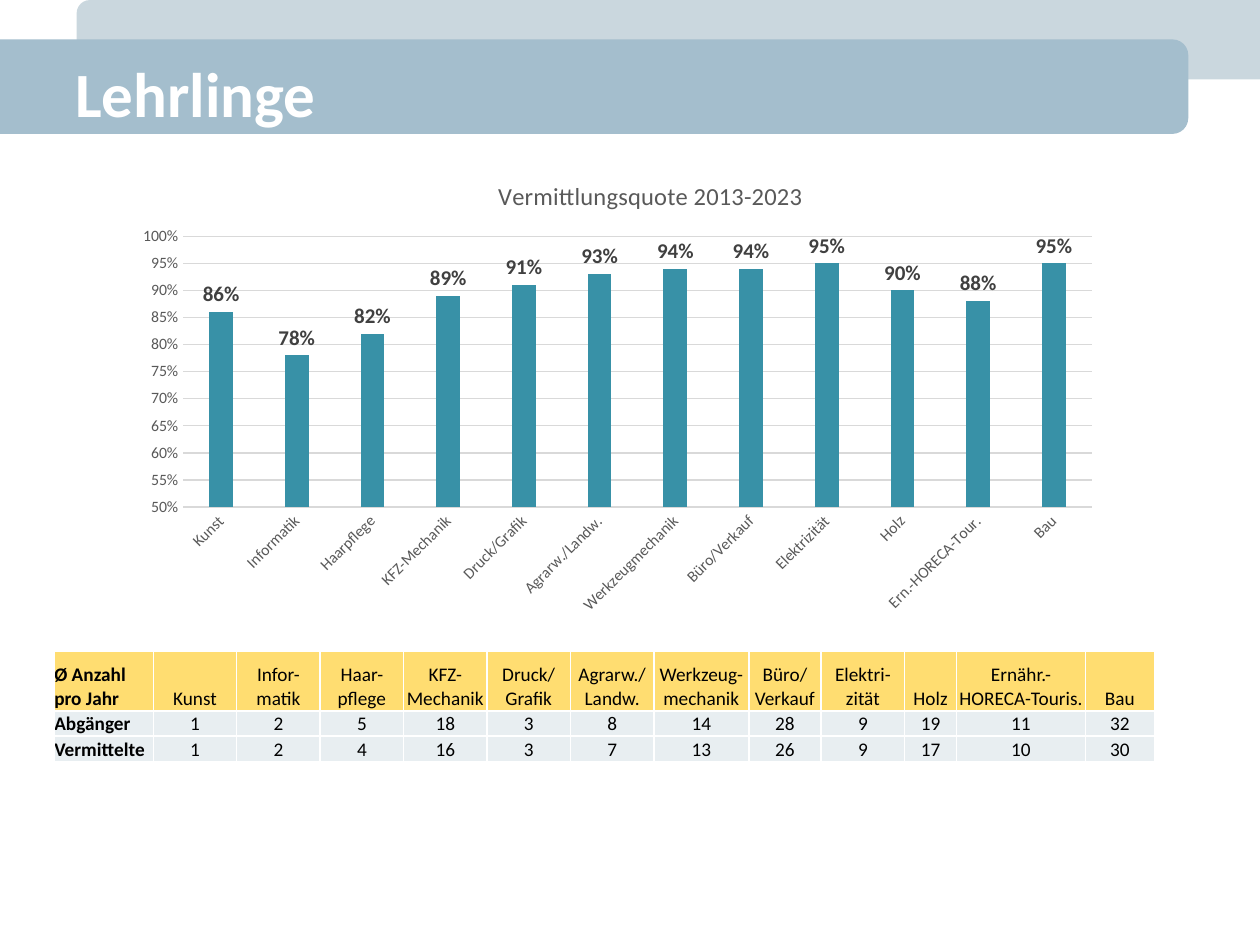
from dataclasses import dataclass

from lxml import etree
from pptx import Presentation
from pptx.chart.data import CategoryChartData
from pptx.dml.color import RGBColor
from pptx.enum import chart as charts, shapes, text
from pptx.oxml import ns, xmlchemy
from pptx.util import Pt


@dataclass(frozen=True)
class Theme:
    font: str = "Calibri"
    back_band: str = "8BA8B8"
    front_band: str = "A4BECD"
    white: str = "FFFFFF"
    black: str = "000000"
    muted: str = "595959"
    label: str = "404040"
    grid: str = "D9D9D9"
    bar: str = "3891A7"
    header: str = "FFDD71"
    body: str = "E8EEF1"
    title_size: float = 36
    chart_title_size: float = 14
    label_size: float = 12
    table_size: float = 11
    axis_size: float = 9


THEME = Theme()

QUOTAS = {
    "Kunst": 0.86, "Informatik": 0.78, "Haarpflege": 0.82, "KFZ-Mechanik": 0.89,
    "Druck/Grafik": 0.91, "Agrarw./Landw.": 0.93, "Werkzeugmechanik": 0.94,
    "Büro/Verkauf": 0.94, "Elektrizität": 0.95, "Holz": 0.90,
    "Ern.-HORECA-Tour.": 0.88, "Bau": 0.95,
}
TABLE_ROWS = [
    ["Ø Anzahl pro Jahr", "Kunst", "Infor-matik", "Haar-pflege", "KFZ-Mechanik",
     "Druck/ Grafik", "Agrarw./ Landw.", "Werkzeug-mechanik", "Büro/ Verkauf",
     "Elektri-zität", "Holz", "Ernähr.-HORECA-Touris.", "Bau"],
    ["Abgänger", 1, 2, 5, 18, 3, 8, 14, 28, 9, 19, 11, 32],
    ["Vermittelte", 1, 2, 4, 16, 3, 7, 13, 26, 9, 17, 10, 30],
]
COLUMN_WIDTHS = [56.6] + [47.7] * 6 + [54.2, 41.4, 47.7, 29.7, 73.7, 39.4]
ROW_HEIGHTS = [33.84, 14.4, 14.4]


def rgb(color):
    return RGBColor.from_string(color)


def set_font(font, size, color, bold=False):
    font.name, font.size, font.bold = THEME.font, Pt(size), bold
    font.color.rgb = rgb(color)


def write(frame, words, size, color, bold=False, align=text.PP_ALIGN.LEFT):
    frame.word_wrap = True
    para = frame.paragraphs[0]
    para.alignment = align
    span = para.add_run()
    span.text = words
    set_font(span.font, size, color, bold)


def add_band(page, left, top, width, height, rotation, color, opacity=100):
    """Draw a bar in the given box; its rounded end faces where rotation points."""
    # The preset rounds its top, so the unrotated shape has the sides swapped.
    shift = (width - height) / 2
    band = page.shapes.add_shape(
        shapes.MSO_SHAPE.ROUND_2_SAME_RECTANGLE,
        Pt(left + shift), Pt(top - shift), Pt(height), Pt(width))
    band.rotation = rotation
    band.shadow.inherit = False
    band.line.fill.background()
    band.fill.solid()
    band.fill.fore_color.rgb = rgb(color)
    if opacity < 100:
        tint = band.fill._xPr.find(".//" + ns.qn("a:srgbClr"))
        etree.SubElement(tint, ns.qn("a:alpha"), val=str(opacity * 1000))


def add_header(page, left, top, width, height):
    add_band(page, left + 43.8, top, width - 42.5, 45.3, 270, THEME.back_band, 45)
    add_band(page, left, top + 22.5, 679, 54, 90, THEME.front_band)
    box = page.shapes.add_textbox(Pt(left + 36), Pt(top + 21.6), Pt(648), Pt(height - 21.6))
    box.text_frame.vertical_anchor = text.MSO_ANCHOR.MIDDLE
    write(box.text_frame, "Lehrlinge", THEME.title_size, THEME.white, bold=True)


def add_borders(cell):
    props = cell._tc.get_or_add_tcPr()
    for place, side in enumerate(("lnL", "lnR", "lnT", "lnB")):
        line = etree.Element(ns.qn("a:" + side), w=str(Pt(1)))
        fill = etree.SubElement(line, ns.qn("a:solidFill"))
        etree.SubElement(fill, ns.qn("a:srgbClr"), val=THEME.white)
        props.insert(place, line)


def add_counts_table(page, left, top, width, height):
    table = page.shapes.add_table(
        len(TABLE_ROWS), len(COLUMN_WIDTHS), Pt(left), Pt(top), Pt(width), Pt(height)).table
    table.horz_banding = False
    for column, column_width in zip(table.columns, COLUMN_WIDTHS):
        column.width = Pt(column_width)
    for row, row_height in zip(table.rows, ROW_HEIGHTS):
        row.height = Pt(row_height)
    for r, values in enumerate(TABLE_ROWS):
        for c, value in enumerate(values):
            cell = table.cell(r, c)
            cell.margin_left = cell.margin_right = cell.margin_top = cell.margin_bottom = 0
            cell.vertical_anchor = text.MSO_ANCHOR.BOTTOM
            cell.fill.solid()
            cell.fill.fore_color.rgb = rgb(THEME.body if r else THEME.header)
            add_borders(cell)
            write(cell.text_frame, str(value), THEME.table_size, THEME.black, bold=c == 0,
                  align=text.PP_ALIGN.CENTER if c else text.PP_ALIGN.LEFT)


def manual_layout(**values):
    """Make a chart layout element from its settings, in schema order."""
    layout = etree.Element(ns.qn("c:layout"))
    manual = etree.SubElement(layout, ns.qn("c:manualLayout"))
    for name, value in values.items():
        etree.SubElement(manual, ns.qn("c:" + name), val=str(value))
    return layout


def replace_layout(parent, layout, place):
    for old in parent.findall(ns.qn("c:layout")):
        parent.remove(old)
    parent.insert(place, layout)


def style_axes(chart):
    for axis in (chart.category_axis, chart.value_axis):
        axis.major_tick_mark = axis.minor_tick_mark = charts.XL_TICK_MARK.NONE
        set_font(axis.tick_labels.font, THEME.axis_size, THEME.muted)
    values = chart.value_axis
    values.minimum_scale, values.maximum_scale, values.major_unit = 0.5, 1, 0.05
    values.tick_labels.number_format = "0%"
    values.tick_labels.number_format_is_linked = False
    values.format.line.fill.background()
    for line in (chart.category_axis.format.line, values.major_gridlines.format.line):
        line.color.rgb = rgb(THEME.grid)
        line.width = Pt(0.75)
    label_body = chart.category_axis._element.find(ns.qn("c:txPr")).find(ns.qn("a:bodyPr"))
    label_body.set("rot", str(-45 * 60000))
    label_body.set("vert", "horz")


def add_quota_chart(page, left, top, width, height):
    data = CategoryChartData(number_format="0%")
    data.categories = list(QUOTAS)
    data.add_series("Series 1", list(QUOTAS.values()))
    chart = page.shapes.add_chart(
        charts.XL_CHART_TYPE.COLUMN_CLUSTERED,
        Pt(left), Pt(top), Pt(width), Pt(height), data).chart
    set_font(chart.font, 10, THEME.black)
    chart.has_legend = False
    write(chart.chart_title.text_frame, "Vermittlungsquote 2013-2023",
          THEME.chart_title_size, THEME.muted)
    chart.chart_title.include_in_layout = False
    replace_layout(chart.chart_title._element,
                   manual_layout(xMode="edge", yMode="edge", x=0.386, y=0.05), 1)
    style_axes(chart)

    plot = chart.plots[0]
    plot.gap_width, plot.overlap, plot.vary_by_categories = 219, -27, False
    bars = plot.series[0].format.fill
    bars.solid()
    bars.fore_color.rgb = rgb(THEME.bar)
    plot.has_data_labels = True
    labels = plot.data_labels
    labels.show_value = True
    labels.number_format, labels.number_format_is_linked = "0%", False
    labels.position = charts.XL_LABEL_POSITION.OUTSIDE_END
    set_font(labels.font, THEME.label_size, THEME.label, bold=True)
    area = chart._chartSpace.find(".//" + ns.qn("c:plotArea"))
    replace_layout(area, manual_layout(layoutTarget="inner", xMode="edge", yMode="edge",
                                       x=0.076, y=0.166, w=0.907, h=0.506), 0)


def main():
    deck = Presentation()
    deck.slide_width, deck.slide_height = Pt(720), Pt(540)
    page = deck.slides.add_slide(deck.slide_layouts[6])
    add_header(page, 0, 0, 720, 84.2)
    add_counts_table(page, 31, 372.4, sum(COLUMN_WIDTHS), sum(ROW_HEIGHTS))
    add_quota_chart(page, 61.2, 84.2, 572.4, 306)
    deck.save("out.pptx")


if __name__ == "__main__":
    main()
